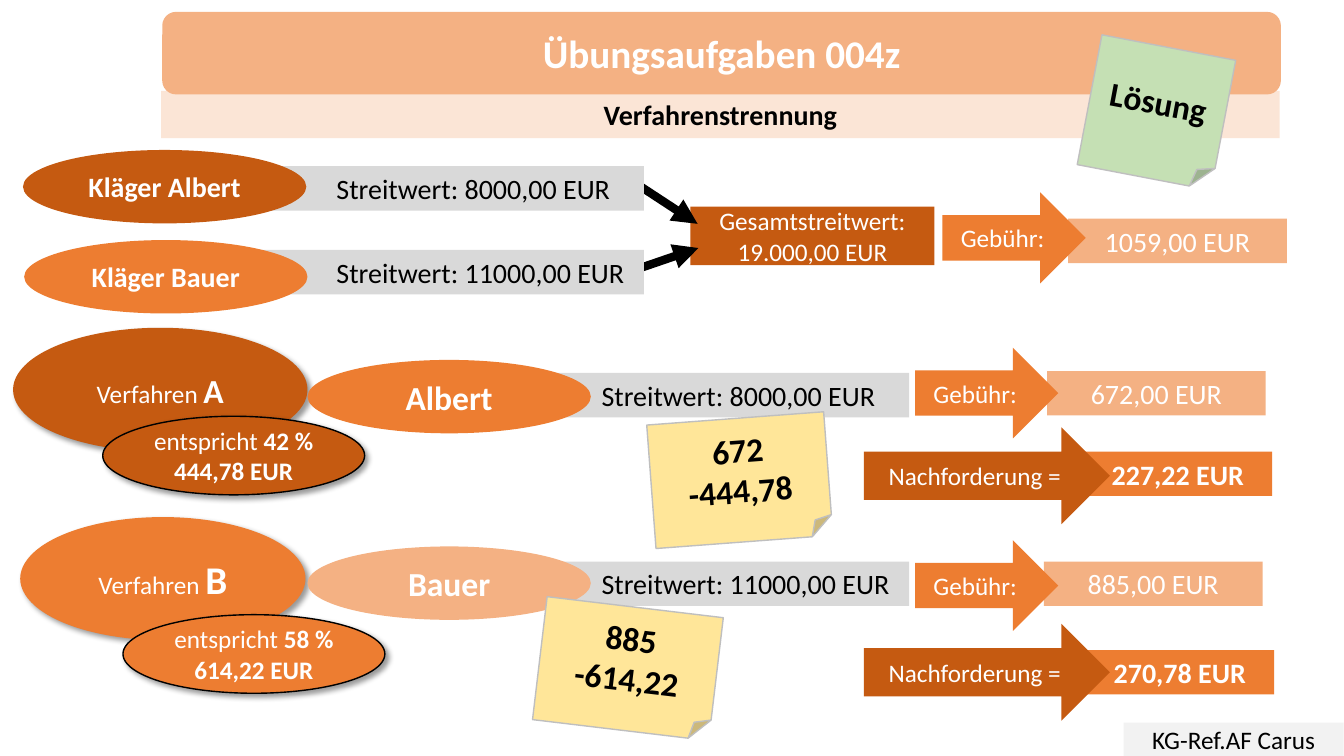
from lxml import etree
from pptx import Presentation
from pptx.dml.color import RGBColor
from pptx.enum.shapes import MSO_CONNECTOR, MSO_SHAPE
from pptx.enum.text import MSO_ANCHOR, PP_ALIGN
from pptx.oxml.ns import qn
from pptx.util import Cm, Pt

RECT = MSO_SHAPE.RECTANGLE
ROUNDED = MSO_SHAPE.ROUNDED_RECTANGLE
OVAL = MSO_SHAPE.OVAL
ARROW = MSO_SHAPE.RIGHT_ARROW
NOTE = MSO_SHAPE.FOLDED_CORNER
STRAIGHT = MSO_CONNECTOR.STRAIGHT
MIDDLE = MSO_ANCHOR.MIDDLE
CENTER, LEFT = PP_ALIGN.CENTER, PP_ALIGN.LEFT

RUST, ORANGE, PEACH, CREAM = "C55A11", "ED7D31", "F4B183", "FBE5D6"
BLACK, WHITE, GREY, PALE, EDGE = "000000", "FFFFFF", "D9D9D9", "F2F2F2", "BFBFBF"
GREEN, YELLOW = "C5E0B4", "FFE699"


def color(value):
    return RGBColor.from_string(value)


class Worksheet:
    """Holds the text style and the current page and draws its elements."""

    font = "Calibri"

    def __init__(self, page):
        self.page = page

    def shape(self, kind, place, fill, lines, size=18, ink=WHITE, bold=False, edge=None):
        shape = self.page.shapes.add_shape(kind, *map(Cm, place))
        shape.shadow.inherit = False
        shape.fill.solid()
        shape.fill.fore_color.rgb = color(fill)
        if edge:
            shape.line.color.rgb = color(edge)
            shape.line.width = Pt(1)
        else:
            shape.line.fill.background()
        frame = shape.text_frame
        frame.word_wrap = True
        frame.vertical_anchor = MIDDLE
        for index, spans in enumerate(lines):
            para = frame.add_paragraph() if index else frame.paragraphs[0]
            para.alignment = CENTER
            para.font.name = self.font
            para.font.size = Pt(size)
            para.font.bold = bold
            para.font.color.rgb = color(ink)
            for text, *strong_size in [(spans,)] if isinstance(spans, str) else spans:
                span = para.add_run()
                span.text = text
                if strong_size:
                    span.font.bold = True
                    span.font.size = Pt(strong_size[0])
        return shape

    def claim(self, left, top, amount):
        bar = self.shape(RECT, (left, top, 10.54, 1.12), GREY,
                         [f"Streitwert: {amount} EUR"], 20, BLACK)
        bar.text_frame.margin_left = Cm(2.79)
        bar.text_frame.margin_right = 0
        bar.text_frame.paragraphs[0].alignment = LEFT

    def party(self, left, top, fill, name, size):
        self.shape(OVAL, (left, top, 7.14, 1.85), fill, [name], size, bold=True)

    def fee(self, left, top, value_left, value_top, amount):
        self.shape(RECT, (value_left, value_top, 5.51, 1.12), PEACH, [f"{amount} EUR"], 20)
        self.shape(ARROW, (left, top, 3.61, 2.29), ORANGE, ["Gebühr:"])

    def demand(self, top, value_left, value_top, amount):
        self.shape(RECT, (value_left, value_top, 4.75, 1.12), ORANGE,
                   [f"{amount} EUR"], 20, bold=True)
        self.shape(ARROW, (21.77, top, 6.2, 2.44), RUST, ["Nachforderung ="])

    def shaded_oval(self, place, fill, lines, edge=None):
        oval = self.shape(OVAL, place, fill, lines, edge=edge)
        effects = oval._element.spPr.find(qn("a:effectLst"))
        shadow = etree.SubElement(effects, qn("a:outerShdw"), blurRad=str(Pt(4)),
                                  dist=str(Pt(3)), dir="2700000", algn="tl", rotWithShape="0")
        tint = etree.SubElement(shadow, qn("a:srgbClr"), val=BLACK)
        etree.SubElement(tint, qn("a:alpha"), val="40000")

    def note(self, place, fill, lines, angle):
        note = self.shape(NOTE, place, fill, lines, 24, BLACK, True, EDGE)
        note.rotation = angle

    def pointer(self, *ends):
        pointer = self.page.shapes.add_connector(STRAIGHT, *map(Cm, ends))
        pointer.line.color.rgb = color(BLACK)
        pointer.line.width = Pt(6)
        etree.SubElement(pointer.line._get_or_add_ln(), qn("a:tailEnd"), type="triangle")
        etree.SubElement(pointer._element.spPr, qn("a:effectLst"))


def main():
    deck = Presentation()
    deck.slide_width, deck.slide_height = Cm(33.87), Cm(19.05)
    sheet = Worksheet(deck.slides.add_slide(deck.slide_layouts[6]))

    sheet.shape(RECT, (4.06, 2.29, 28.19, 1.19), CREAM, ["Verfahrenstrennung"], 20, BLACK, True)
    sheet.shape(ROUNDED, (4.09, 0.3, 28.19, 2.08), PEACH, ["Übungsaufgaben 004z"], 28, bold=True)
    sheet.shape(RECT, (28.32, 18.21, 5.54, 0.84), PALE, ["KG-Ref.AF Carus"], 18, BLACK)
    sheet.note((27.43, 1.17, 3.43, 3.33), GREEN, ["Lösung"], 10.8)

    sheet.shape(RECT, (17.4, 5.21, 6.15, 1.47), RUST, ["Gesamtstreitwert:", "19.000,00 EUR"])
    sheet.pointer(15.67, 4.39, 17.58, 5.64)
    sheet.pointer(15.62, 6.93, 17.6, 6.25)
    sheet.claim(5.69, 4.19, "8000,00")
    sheet.party(0.58, 3.78, RUST, "Kläger Albert", 20)
    sheet.claim(5.69, 6.3, "11000,00")
    sheet.party(0.61, 6.05, ORANGE, "Kläger Bauer", 20)
    sheet.fee(23.75, 4.85, 26.92, 5.51, "1059,00")

    sheet.claim(12.37, 9.4, "8000,00")
    sheet.shaded_oval((0.33, 8.26, 7.42, 3.12), RUST, [[("Verfahren ",), ("A", 24)]])
    sheet.shaded_oval((2.59, 10.49, 6.6, 1.98), RUST,
                      [[("entspricht ",), ("42 %", 18)], [("444,78 EUR", 18)]], BLACK)
    sheet.party(7.75, 9.07, ORANGE, "Albert", 24)
    sheet.fee(23.06, 8.76, 26.39, 9.35, "672,00")
    sheet.demand(10.77, 27.31, 11.38, "227,22")
    sheet.note((16.41, 10.54, 4.47, 3.12), YELLOW, ["672", "-444,78"], -4.3)

    sheet.claim(12.37, 14.15, "11000,00")
    sheet.shaded_oval((0.51, 13.03, 7.19, 3.1), ORANGE, [[("Verfahren ",), ("B", 28)]])
    sheet.shaded_oval((3.1, 15.49, 6.6, 1.98), ORANGE,
                      [[("entspricht ",), ("58 %", 18)], [("614,22 EUR", 18)]], BLACK)
    sheet.party(7.75, 13.77, PEACH, "Bauer", 24)
    sheet.fee(23.06, 13.61, 26.31, 14.15, "885,00")
    sheet.demand(15.72, 27.36, 16.38, "270,78")
    sheet.note((13.59, 15.29, 4.47, 3.12), YELLOW, ["885", "-614,22"], 6.8)

    deck.save("out.pptx")


if __name__ == "__main__":
    main()
